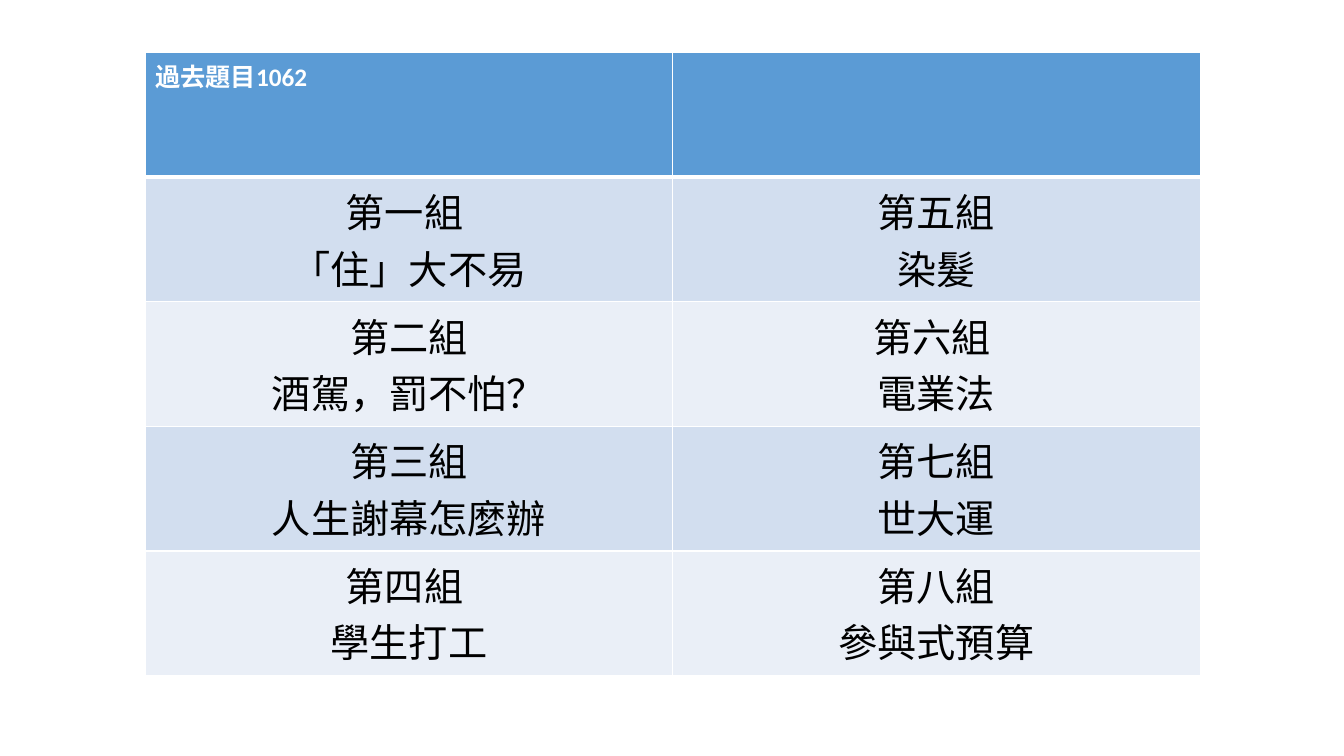
from lxml import etree
from pptx import Presentation
from pptx.dml.color import RGBColor
from pptx.enum import text
from pptx.oxml import ns
from pptx.util import Pt

WHITE = RGBColor(0xFF, 0xFF, 0xFF)
BLACK = RGBColor(0x00, 0x00, 0x00)
HEADER_BLUE = RGBColor(0x5B, 0x9B, 0xD5)
BANDS = [RGBColor(0xEA, 0xEF, 0xF7), RGBColor(0xD2, 0xDE, 0xEF)]

ROWS = [
    ("過去題目1062", ""),
    ("第一組 \n「住」大不易", "第五組\n染髮"),
    ("第二組\n酒駕，罰不怕？", "第六組 \n電業法"),
    ("第三組\n人生謝幕怎麼辦", "第七組\n世大運"),
    ("第四組 \n學生打工", "第八組\n參與式預算"),
]


def set_borders(cell, widths):
    """Draw white cell borders; widths maps a side (L, R, T, B) to points."""
    tc_pr = cell._tc.get_or_add_tcPr()
    for side, width in widths.items():
        ln = etree.SubElement(tc_pr, ns.qn(f"a:ln{side}"), w=str(Pt(width)))
        fill = etree.SubElement(ln, ns.qn("a:solidFill"))
        etree.SubElement(fill, ns.qn("a:srgbClr"), val=str(WHITE))


prs = Presentation()
prs.slide_width, prs.slide_height = Pt(960), Pt(540)
s = prs.slides.add_slide(prs.slide_layouts[6])

table = s.shapes.add_table(len(ROWS), 2, Pt(103.7), Pt(37.6), Pt(753.6), Pt(445)).table

for row, labels in enumerate(ROWS):
    is_header = row == 0
    for col, label in enumerate(labels):
        cell = table.cell(row, col)
        set_borders(cell, {"L": 1, "R": 1, "T": 3 if row == 1 else 1, "B": 3 if is_header else 1})
        cell.fill.solid()
        cell.fill.fore_color.rgb = HEADER_BLUE if is_header else BANDS[row % 2]
        cell.text_frame.text = label
        for p in cell.text_frame.paragraphs:
            p.alignment = text.PP_ALIGN.LEFT if is_header else text.PP_ALIGN.CENTER
            for r in p.runs:
                r.font.name = "Calibri"
                r.font.size = Pt(18 if is_header else 28)
                r.font.bold = is_header
                r.font.color.rgb = WHITE if is_header else BLACK

prs.save("out.pptx")
